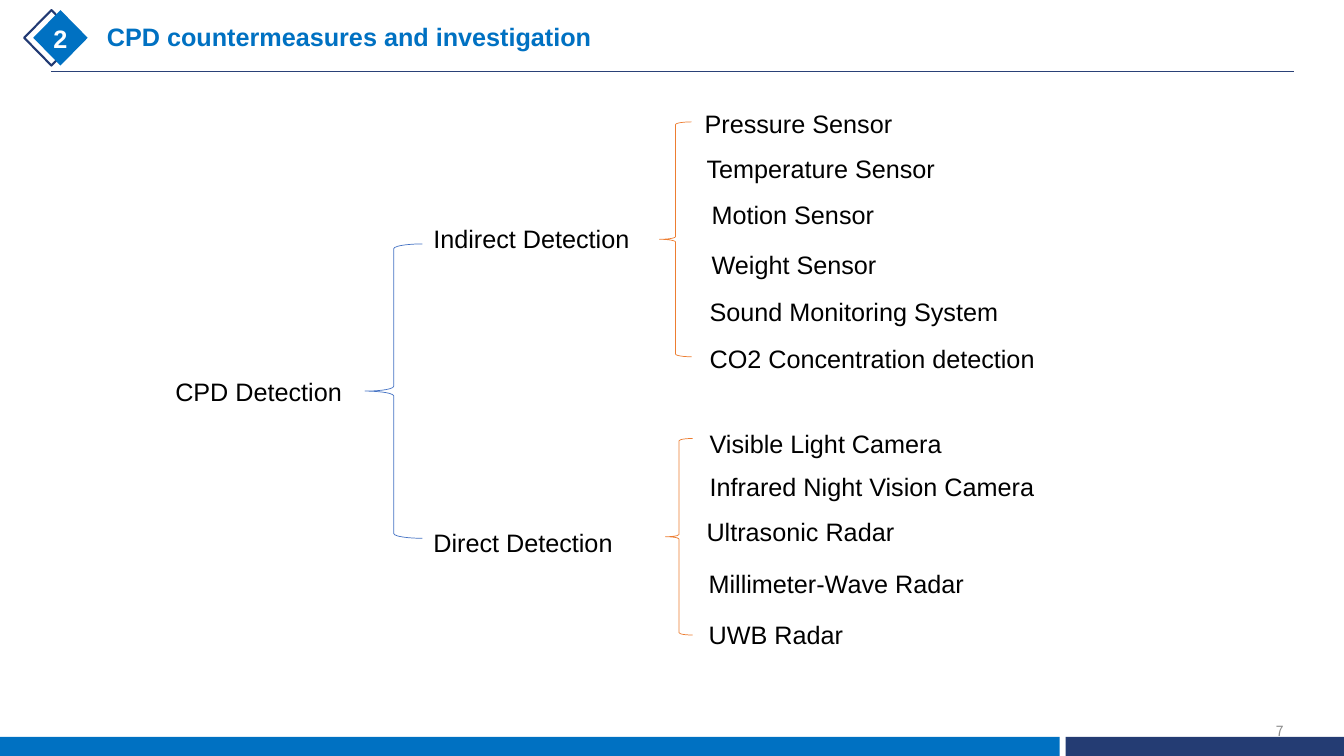
"""Build the slide that classifies CPD detection methods as a bracket tree."""
from dataclasses import dataclass
from typing import Optional

import pptx
import pptx.dml.color
import pptx.enum.shapes
import pptx.enum.text
import pptx.oxml
import pptx.oxml.ns
import pptx.shapes.autoshape
import pptx.slide
import pptx.util

EMU_PER_PX = 9144
Shapes = pptx.enum.shapes.MSO_SHAPE
Align = pptx.enum.text.PP_ALIGN
Anchor = pptx.enum.text.MSO_ANCHOR


@dataclass(frozen=True)
class Theme:
    blue: str = "0071C2"
    navy: str = "243C73"
    outline: str = "223A73"
    rule: str = "2A4177"
    root_brace: str = "4472C4"
    branch_brace: str = "ED7D31"
    text: str = "000000"
    white: str = "FFFFFF"
    muted: str = "8C8C8C"
    font: str = "Arial"
    number_font: str = "Noto Sans CJK SC"
    body_size: int = 18
    number_size: int = 10
    thin: float = 0.5
    thick: float = 1.5


THEME = Theme()


@dataclass(frozen=True)
class Box:
    left: int
    top: int
    width: int
    height: int = 40

    def emu(self) -> tuple[pptx.util.Emu, ...]:
        return tuple(px(value) for value in (self.left, self.top, self.width, self.height))


@dataclass(frozen=True)
class Label:
    text: str
    box: Box
    color: str = THEME.text
    size: int = THEME.body_size
    font: str = THEME.font
    bold: bool = False
    align: pptx.enum.text.PP_ALIGN = Align.LEFT
    anchor: pptx.enum.text.MSO_ANCHOR = Anchor.TOP
    inset: Optional[int] = None
    grow: bool = True


@dataclass(frozen=True)
class Figure:
    kind: pptx.enum.shapes.MSO_SHAPE
    box: Box
    fill: Optional[str] = None
    line: Optional[str] = None
    weight: float = THEME.thin


TITLE = Label("CPD countermeasures and investigation", Box(96, 16, 844),
              color=THEME.blue, bold=True)

FIGURES = (
    Figure(Shapes.RECTANGLE, Box(0, 731, 1051, 19), fill=THEME.blue),
    Figure(Shapes.RECTANGLE, Box(1057, 731, 276, 19), fill=THEME.navy),
    Figure(Shapes.DIAMOND, Box(24, 10, 54, 55), line=THEME.outline, weight=THEME.thick),
    Figure(Shapes.DIAMOND, Box(33, 10, 54, 55), fill=THEME.blue),
    Figure(Shapes.LEFT_BRACE, Box(362, 242, 57, 292), line=THEME.root_brace),
    Figure(Shapes.LEFT_BRACE, Box(654, 121, 32, 233), line=THEME.branch_brace),
    Figure(Shapes.LEFT_BRACE, Box(660, 435, 27, 195), line=THEME.branch_brace),
)

LABELS = (
    Label("7", Box(1238, 712, 45, 26), color=THEME.muted, size=THEME.number_size,
          font=THEME.number_font, align=Align.RIGHT, anchor=Anchor.MIDDLE, grow=False),
    Label("2", Box(43, 23, 34, 30), color=THEME.white, bold=True,
          align=Align.CENTER, inset=0),
    Label("CPD Detection", Box(164, 368, 216)),
    Label("Indirect Detection", Box(420, 217, 224)),
    Label("Direct Detection", Box(420, 518, 224)),
    Label("Pressure Sensor", Box(689, 103, 224)),
    Label("Temperature Sensor", Box(691, 147, 288)),
    Label("Motion Sensor", Box(696, 193, 224)),
    Label("Weight Sensor", Box(696, 242, 224)),
    Label("Sound Monitoring System", Box(694, 289, 307)),
    Label("CO2 Concentration detection", Box(694, 336, 414)),
    Label("Visible Light Camera", Box(694, 420, 546)),
    Label("Infrared Night Vision Camera", Box(694, 463, 388)),
    Label("Ultrasonic Radar", Box(691, 507, 467)),
    Label("Millimeter-Wave Radar", Box(693, 559, 467)),
    Label("UWB Radar", Box(693, 609, 542)),
)


def px(value: int) -> pptx.util.Emu:
    return pptx.util.Emu(value * EMU_PER_PX)


def rgb(color: str) -> pptx.dml.color.RGBColor:
    return pptx.dml.color.RGBColor.from_string(color)


def write_label(shape: pptx.shapes.autoshape.Shape, label: Label) -> None:
    shape.left, shape.top, shape.width, shape.height = label.box.emu()
    frame = shape.text_frame
    frame.text = label.text
    frame.word_wrap = True
    frame.vertical_anchor = label.anchor
    sizing = pptx.enum.text.MSO_AUTO_SIZE
    frame.auto_size = sizing.SHAPE_TO_FIT_TEXT if label.grow else sizing.NONE
    if label.inset is not None:
        frame.margin_left = frame.margin_right = px(label.inset)
        frame.margin_top = frame.margin_bottom = px(label.inset)
    paragraph = frame.paragraphs[0]
    paragraph.alignment = label.align
    font = paragraph.runs[0].font
    font.name = label.font
    font.size = pptx.util.Pt(label.size)
    font.bold = label.bold
    font.color.rgb = rgb(label.color)


def draw_figure(slide: pptx.slide.Slide, figure: Figure) -> None:
    shape = slide.shapes.add_shape(figure.kind, *figure.box.emu())
    shape.shadow.inherit = False
    if figure.fill:
        shape.fill.solid()
        shape.fill.fore_color.rgb = rgb(figure.fill)
    else:
        shape.fill.background()
    if figure.line:
        shape.line.color.rgb = rgb(figure.line)
        shape.line.width = pptx.util.Pt(figure.weight)
    else:
        shape.line.fill.background()


def draw_header_rule(slide: pptx.slide.Slide) -> None:
    connector = slide.shapes.add_connector(
        pptx.enum.shapes.MSO_CONNECTOR.STRAIGHT, px(51), px(71), px(1283), px(71))
    connector.line.color.rgb = rgb(THEME.rule)
    connector.line.width = pptx.util.Pt(THEME.thin)
    properties = connector._element.spPr
    properties.append(pptx.oxml.parse_xml(
        f"<a:effectLst {pptx.oxml.ns.nsdecls('a')}/>"))


def main() -> None:
    presentation = pptx.Presentation()
    presentation.slide_width = pptx.util.Inches(13.33)
    presentation.slide_height = pptx.util.Inches(7.5)
    title_only = presentation.slide_layouts.get_by_name("Title Only")
    slide = presentation.slides.add_slide(title_only)
    write_label(slide.shapes.title, TITLE)
    draw_header_rule(slide)
    for figure in FIGURES:
        draw_figure(slide, figure)
    for label in LABELS:
        write_label(slide.shapes.add_textbox(*label.box.emu()), label)
    presentation.save("out.pptx")


if __name__ == "__main__":
    main()
